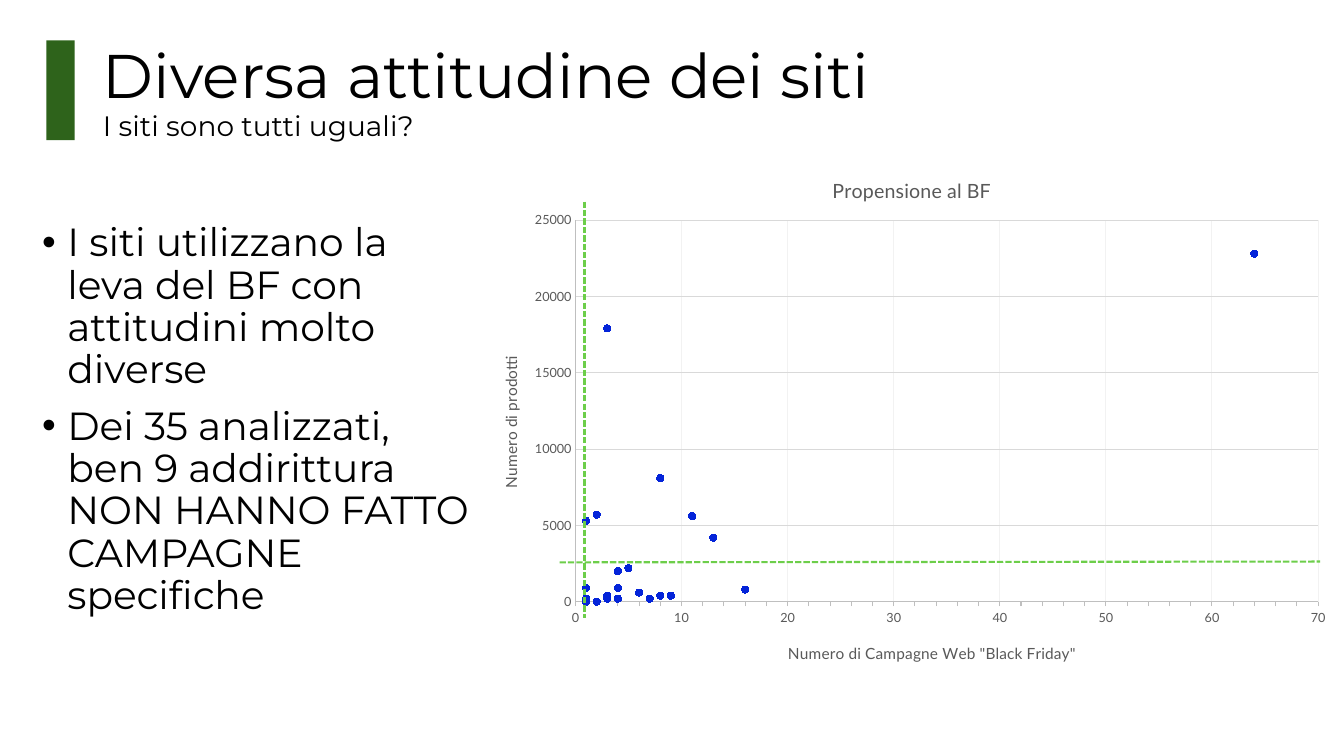
from lxml.etree import SubElement
from pptx import Presentation
from pptx.chart.data import XyChartData
from pptx.dml.color import RGBColor
from pptx.enum.chart import XL_CHART_TYPE, XL_MARKER_STYLE, XL_TICK_MARK
from pptx.enum.dml import MSO_LINE
from pptx.enum.shapes import MSO_CONNECTOR, MSO_SHAPE
from pptx.enum.text import MSO_ANCHOR, MSO_AUTO_SIZE, PP_ALIGN
from pptx.oxml import parse_xml
from pptx.oxml.ns import nsdecls, qn
from pptx.util import Cm, Pt

POINTS = [
    (1, 100), (8, 400), (1, 0), (4, 2000), (3, 200), (7, 200), (1, 5300),
    (64, 22800), (1, 900), (4, 200), (2, 5700), (9, 400), (1, 200), (4, 200),
    (1, 0), (8, 8100), (16, 800), (1, 0), (4, 900), (3, 17900), (2, 0),
    (11, 5600), (3, 400), (5, 2200), (6, 600), (13, 4200),
]


def color(code):
    """Turn a hex string into a colour."""
    return RGBColor.from_string(code)


class Deck:
    """Hold the style and the current slide, and draw each kind of element."""

    face, ink = "Montserrat", "000000"
    small, gray = "Lato", "595959"
    bar_fill, dash, dot = "2E631B", "6DCE4A", "0424D9"

    def __init__(self):
        """Open a wide deck with one title-only slide."""
        self.show = Presentation()
        self.show.slide_width, self.show.slide_height = Cm(33.87), Cm(19.05)
        self.slide = self.show.slides.add_slide(self.show.slide_layouts[5])

    def font(self, font, face, size, code):
        """Set face, size and colour of a font."""
        font.name, font.size, font.bold = face, Pt(size), False
        font.color.rgb = color(code)

    def bar(self, *box):
        """Draw the accent bar."""
        shape = self.slide.shapes.add_shape(MSO_SHAPE.RECTANGLE, *map(Cm, box))
        shape.shadow.inherit = False
        shape.fill.solid()
        shape.fill.fore_color.rgb = color(self.bar_fill)
        shape.line.fill.background()

    def title(self, head, sub, *box):
        """Fill the title with a heading and a smaller second line."""
        shape = self.slide.shapes.title
        shape.left, shape.top, shape.width, shape.height = map(Cm, box)
        frame = shape.text_frame
        frame.auto_size = MSO_AUTO_SIZE.NONE
        frame.vertical_anchor = MSO_ANCHOR.TOP
        par = frame.paragraphs[0]
        par.alignment, par.line_spacing = PP_ALIGN.LEFT, 0.9
        self.font(par.font, self.face, 44, self.ink)
        par.add_run().text = head
        par.add_line_break()
        run = par.add_run()
        run.text, run.font.size = sub, Pt(20)

    def list(self, items, *box):
        """Write a bulleted list."""
        frame = self.slide.shapes.add_textbox(*map(Cm, box)).text_frame
        frame.word_wrap = True
        for num, item in enumerate(items):
            par = frame.add_paragraph() if num else frame.paragraphs[0]
            par.text, par.line_spacing = item, 0.9
            par.space_before = Pt(10 if num else 0)
            props = par._p.get_or_add_pPr()
            props.set("marL", str(Cm(0.64)))
            props.set("indent", str(-Cm(0.64)))
            SubElement(props, qn("a:buFont")).set("typeface", "Arial")
            SubElement(props, qn("a:buChar")).set("char", "•")
            self.font(par.font, self.face, 28, self.ink)

    def place(self, node, spot, inner=False):
        """Give a chart part a fixed place, in shares of the chart."""
        for old in node.findall(qn("c:layout")):
            node.remove(old)
        tags = ["xMode", "yMode", "x", "y", "w", "h"]
        vals = ["edge", "edge", *spot]
        rows = "".join(f'<c:{t} val="{v}"/>' for t, v in zip(tags, vals))
        mode = '<c:layoutTarget val="inner"/>' if inner else ""
        node.insert(0 if inner else 1, parse_xml(
            f'<c:layout {nsdecls("c")}><c:manualLayout>{mode}{rows}'
            "</c:manualLayout></c:layout>"))

    def label(self, owner, text, size, *spot):
        """Name a chart or an axis."""
        title = owner.axis_title if hasattr(owner, "axis_title") else owner.chart_title
        par = title.text_frame.paragraphs[0]
        par.text = text
        self.font(par.font, self.small, size, self.gray)
        self.place(title._element, spot)

    def axis(self, axis, top, step, grid):
        """Set scale, labels and lines of an axis."""
        axis.minimum_scale, axis.maximum_scale, axis.major_unit = 0, top, step
        axis.major_tick_mark = axis.minor_tick_mark = XL_TICK_MARK.NONE
        axis.has_major_gridlines = True
        for line, code in ((axis.format.line, "BFBFBF"),
                           (axis.major_gridlines.format.line, grid)):
            line.color.rgb, line.width = color(code), Pt(0.75)
        self.font(axis.tick_labels.font, self.small, 9, self.gray)

    def chart(self, points, *box):
        """Draw the scatter chart."""
        data = XyChartData()
        group = data.add_series("Series 1")
        for x, y in points:
            group.add_data_point(x, y)
        chart = self.slide.shapes.add_chart(
            XL_CHART_TYPE.XY_SCATTER, *map(Cm, box), data).chart
        chart.has_legend = False
        self.font(chart.font, self.small, 10, self.ink)
        plot = chart.plots[0]
        plot.vary_by_categories = False
        group = plot.series[0]
        group.format.line.fill.background()
        mark = group.marker
        mark.style, mark.size = XL_MARKER_STYLE.CIRCLE, 5
        mark.format.fill.solid()
        mark.format.fill.fore_color.rgb = color(self.dot)
        mark.format.line.color.rgb = color(self.dot)
        across, up = chart.category_axis, chart.value_axis
        self.axis(across, 70, 10, "F2F2F2")
        across.minor_tick_mark = XL_TICK_MARK.OUTSIDE
        self.axis(up, 25000, 5000, "D9D9D9")
        self.label(chart, "Propensione al BF", 14, 0.41, 0.04)
        self.label(across, 'Numero di Campagne Web "Black Friday"', 11, 0.36, 0.92)
        self.label(up, "Numero di prodotti", 11, 0.03, 0.38)
        area = chart._chartSpace.find(".//" + qn("c:plotArea"))
        self.place(area, (0.12, 0.13, 0.85, 0.72), True)

    def line(self, *ends):
        """Draw a dashed threshold line."""
        link = self.slide.shapes.add_connector(MSO_CONNECTOR.STRAIGHT, *map(Cm, ends))
        link.line.color.rgb, link.line.width = color(self.dash), Pt(1.5)
        link.line.dash_style = MSO_LINE.SQUARE_DOT
        SubElement(link._element.spPr, qn("a:effectLst"))


def main():
    """Build and save the slide."""
    deck = Deck()
    deck.bar(1.17, 1.02, 0.71, 2.51)
    deck.title("Diversa attitudine dei siti", "I siti sono tutti uguali?",
               2.34, 1.02, 29.21, 3.68)
    deck.list(["I siti utilizzano la leva del BF con attitudini molto diverse",
               "Dei 35 analizzati, ben 9 addirittura NON HANNO FATTO CAMPAGNE specifiche"],
              0.81, 5.49, 11.4, 11.68)
    deck.chart(POINTS, 11.86, 3.81, 22.02, 13.36)
    deck.line(14.73, 5.08, 14.73, 15.57)
    deck.line(14.1, 14.17, 33.27, 14.15)
    deck.show.save("out.pptx")


if __name__ == "__main__":
    main()
